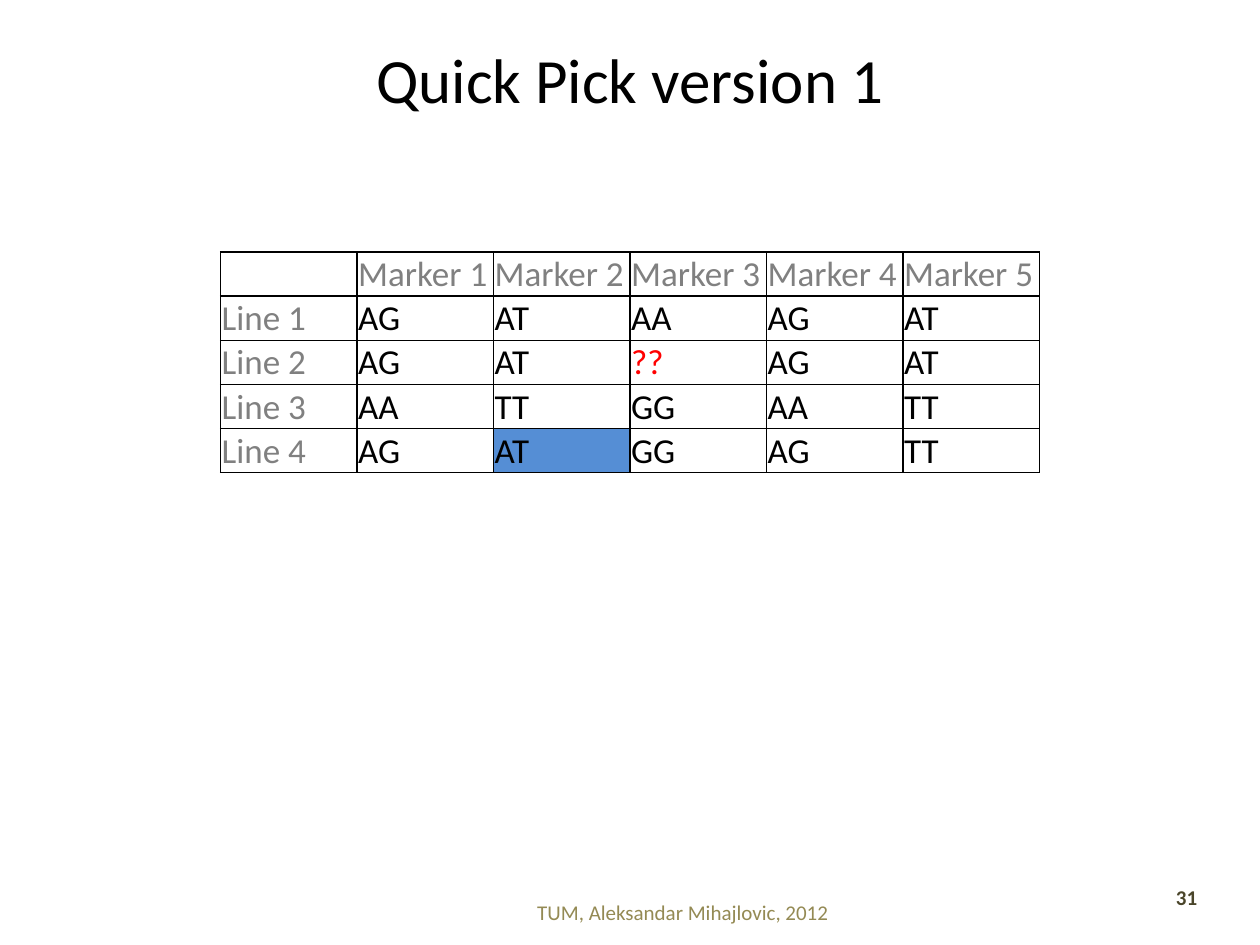
from lxml import etree
from pptx import Presentation
from pptx.dml.color import RGBColor
from pptx.enum import text
from pptx.oxml.ns import qn
from pptx.util import Inches, Pt

# Content
TITLE = "Quick Pick version 1"
FOOTER = "TUM, Aleksandar Mihajlovic, 2012"
NUMBER = "31"
HEADS = [""] + [f"Marker {n}" for n in range(1, 6)]
LINES = [
    ["Line 1", "AG", "AT", "AA", "AG", "AT"],
    ["Line 2", "AG", "AT", "??", "AG", "AT"],
    ["Line 3", "AA", "TT", "GG", "AA", "TT"],
    ["Line 4", "AG", "AT", "GG", "AG", "TT"],
]
PICKED = (4, 2)  # row, column of the filled-in marker
MISSING = "??"

THEME = {
    "font": "Calibri",
    "ink": "000000", "label": "808080", "missing": "FF0000",
    "picked": "558ED5", "footer": "948A54", "number": "4A452A",
    "title size": 36, "cell size": 20, "small size": 12,
}
ALIGN = text.PP_ALIGN
ANCHOR = text.MSO_ANCHOR


def style(para, size, color, align=ALIGN.LEFT, bold=False):
    para.alignment = align
    font = para.font
    font.name, font.size, font.bold = THEME["font"], Pt(THEME[size]), bold
    font.color.rgb = RGBColor.from_string(THEME[color])


def label(slide, words, box, color, align, anchor, bold=False):
    frame = slide.shapes.add_textbox(*map(Inches, box)).text_frame
    frame.word_wrap = True
    frame.vertical_anchor = anchor
    frame.text = words
    style(frame.paragraphs[0], "small size", color, align, bold)


def border(cell):
    props = cell._tc.get_or_add_tcPr()
    for side in ("lnL", "lnR", "lnT", "lnB"):
        line = etree.SubElement(props, qn(f"a:{side}"), w=str(Pt(1)))
        fill = etree.SubElement(line, qn("a:solidFill"))
        etree.SubElement(fill, qn("a:srgbClr"), val=THEME["ink"])


def fill_cell(cell, words, row, col):
    cell.margin_left = cell.margin_right = cell.margin_top = Inches(0.01)
    cell.margin_bottom = 0
    cell.vertical_anchor = ANCHOR.BOTTOM
    border(cell)
    if (row, col) == PICKED:
        cell.fill.solid()
        cell.fill.fore_color.rgb = RGBColor.from_string(THEME["picked"])
    else:
        cell.fill.background()
    cell.text = words
    if row == 0 or col == 0:
        color = "label"
    else:
        color = "missing" if words == MISSING else "ink"
    style(cell.text_frame.paragraphs[0], "cell size", color)


def main():
    deck = Presentation()
    deck.slide_width, deck.slide_height = Inches(10), Inches(7.5)
    slide = deck.slides.add_slide(deck.slide_layouts[5])

    # Title
    title = slide.shapes.title
    title.left, title.top = Inches(0.5), Inches(0)
    title.width, title.height = Inches(9), Inches(1.25)
    title.text_frame.text = TITLE
    title.text_frame.vertical_anchor = ANCHOR.MIDDLE
    style(title.text_frame.paragraphs[0], "title size", "ink", ALIGN.CENTER)

    # Marker table
    rows = [HEADS] + LINES
    table = slide.shapes.add_table(
        len(rows), len(HEADS),
        Inches(1.75), Inches(2), Inches(6.5), Inches(1.75)).table
    table.first_row = table.horz_banding = False
    for r, row in enumerate(rows):
        for c, words in enumerate(row):
            fill_cell(table.cell(r, c), words, r, c)

    # Footer and slide number
    label(slide, FOOTER, (2.53, 7.04, 5.78, 0.39), "footer",
          ALIGN.CENTER, ANCHOR.MIDDLE)
    label(slide, NUMBER, (8.71, 6.97, 0.89, 0.39), "number",
          ALIGN.RIGHT, ANCHOR.TOP, bold=True)

    deck.save("out.pptx")


if __name__ == "__main__":
    main()
